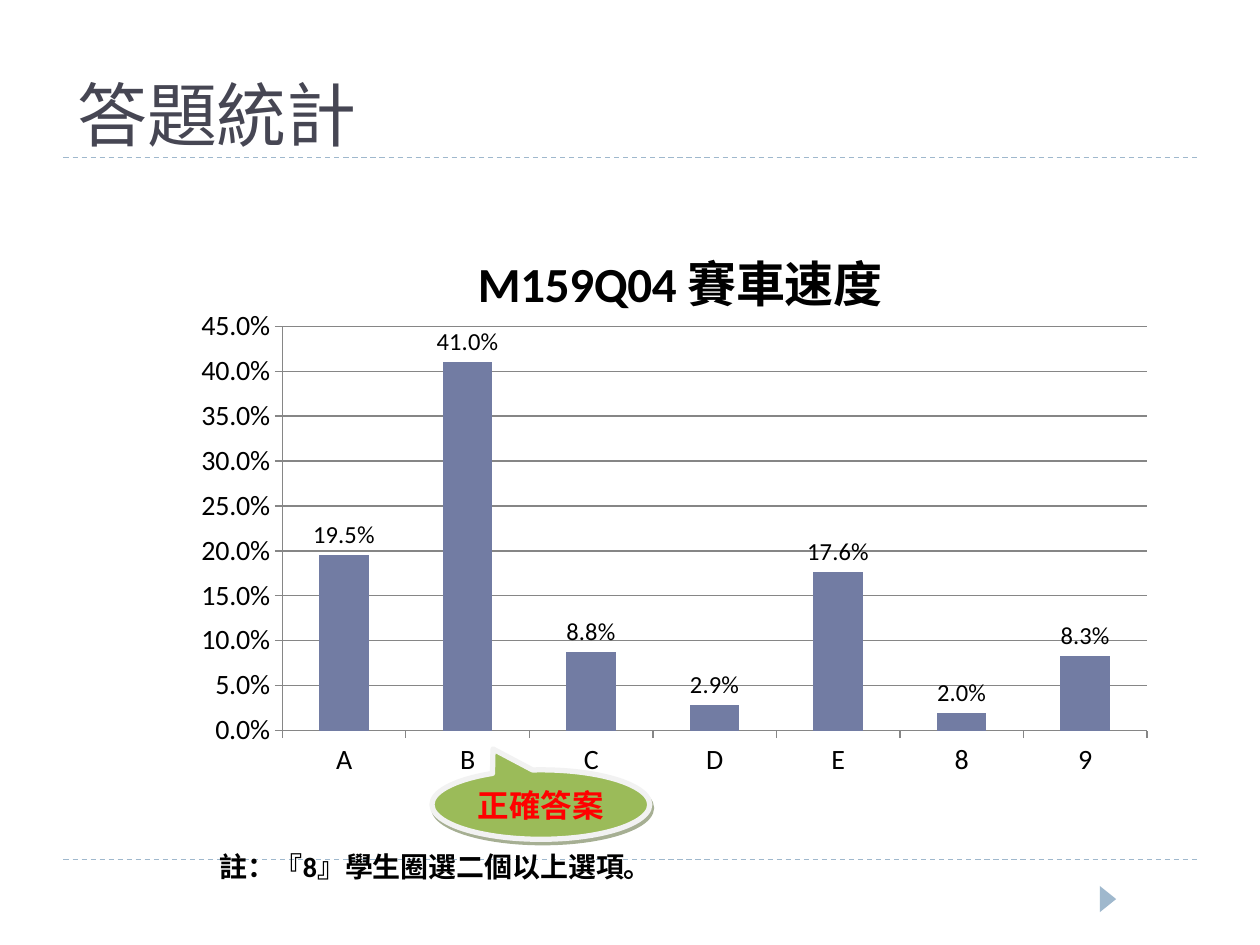
from dataclasses import dataclass

from lxml import etree
from pptx import Presentation
from pptx import util as u
from pptx.chart.data import CategoryChartData
from pptx.dml.color import RGBColor
from pptx.enum import chart as charts, dml, shapes, text
from pptx.oxml import parse_xml
from pptx.oxml.ns import nsdecls, qn


@dataclass(frozen=True)
class Theme:
    """Colours, fonts and type sizes of the deck."""
    rule: str = "9FB8CD"
    title: str = "464653"
    bar: str = "727CA3"
    grid: str = "868686"
    ink: str = "000000"
    callout: str = "9BBB59"
    border: str = "F2F2F2"
    shadow: str = "4E6128"
    answer: str = "FF0000"
    latin: str = "Calibri"
    serif: str = "Times New Roman"
    cjk: str = "Noto Sans CJK SC"
    title_size: int = 40
    chart_title_size: int = 28
    axis_size: int = 16
    label_size: int = 14
    note_size: int = 16
    answer_size: int = 18


@dataclass(frozen=True)
class Box:
    """A rectangle in centimetres."""
    left: float
    top: float
    width: float
    height: float

    def lengths(self):
        """Return the four sides as slide lengths."""
        return [u.Cm(side) for side in (self.left, self.top, self.width, self.height)]


THEME = Theme()


def rgb(code):
    """Turn a hex code into a colour."""
    return RGBColor.from_string(code)


def style(font, size, color, name, bold=False):
    """Set the look of a font."""
    font.size = u.Pt(size)
    font.color.rgb = rgb(color)
    font.name = name
    font.bold = bold


def add_effects(shape, content=""):
    """Replace inherited effects with the given ones."""
    shape._element.spPr.append(
        parse_xml(f"<a:effectLst {nsdecls('a')}>{content}</a:effectLst>"))


def add_rule(page, box, offset):
    """Draw a dashed rule across the box."""
    left, top, width, _ = box.lengths()
    level = top + u.Cm(offset)
    rule = page.shapes.add_connector(
        shapes.MSO_CONNECTOR.STRAIGHT, left, level, left + width, level)
    rule.line.color.rgb = rgb(THEME.rule)
    rule.line.width = u.Pt(0.75)
    rule.line.dash_style = dml.MSO_LINE.DASH
    add_effects(rule)


def add_frame(page, box):
    """Draw the rules on both edges of the box and the page marker below it."""
    for offset in (0, box.height):
        add_rule(page, box, offset)
    marker_box = Box(box.left + 20.79, box.top + box.height + 0.64, 0.53, 0.33)
    marker = page.shapes.add_shape(
        shapes.MSO_SHAPE.ISOSCELES_TRIANGLE, *marker_box.lengths())
    marker.rotation = 90
    marker.shadow.inherit = False
    marker.fill.solid()
    marker.fill.fore_color.rgb = rgb(THEME.rule)
    marker.line.fill.background()


def add_title(page, box, words):
    """Fill the title placeholder."""
    title = page.shapes.title
    title.left, title.top, title.width, title.height = box.lengths()
    frame = title.text_frame
    frame.text = words
    frame.vertical_anchor = text.MSO_ANCHOR.BOTTOM
    para = frame.paragraphs[0]
    para.alignment = text.PP_ALIGN.LEFT
    style(para.runs[0].font, THEME.title_size, THEME.title, THEME.serif)


def set_layout(element, **places):
    """Place a chart part by fractions of the chart."""
    layout = element.find(qn("c:layout"))
    if layout is None:
        layout = element.get_or_add_layout()
    for child in list(layout):
        layout.remove(child)
    manual = etree.SubElement(layout, qn("c:manualLayout"))
    if "w" in places:
        etree.SubElement(manual, qn("c:layoutTarget"), val="inner")
    for mode in ("xMode", "yMode"):
        etree.SubElement(manual, qn(f"c:{mode}"), val="edge")
    for key, value in places.items():
        etree.SubElement(manual, qn(f"c:{key}"), val=str(value))


def add_answer_chart(page, box, heading, shares):
    """Draw the share of students for each answer."""
    data = CategoryChartData(number_format="0.0%")
    data.categories = list(shares)
    data.add_series("Series 1", list(shares.values()))
    chart = page.shapes.add_chart(
        charts.XL_CHART_TYPE.COLUMN_CLUSTERED, *box.lengths(), data).chart
    style(chart.font, 10, THEME.ink, THEME.latin)
    chart.has_legend = False
    chart.has_title = True
    frame = chart.chart_title.text_frame
    frame.text = heading
    style(frame.paragraphs[0].runs[0].font, THEME.chart_title_size, THEME.ink, THEME.latin, True)
    set_layout(chart.chart_title._element, x=0.29, y=0.06)

    for axis in (chart.category_axis, chart.value_axis):
        style(axis.tick_labels.font, THEME.axis_size, THEME.ink, THEME.latin)
        axis.format.line.color.rgb = rgb(THEME.grid)
        axis.major_tick_mark = charts.XL_TICK_MARK.OUTSIDE
    scale = chart.value_axis
    scale.minimum_scale, scale.maximum_scale, scale.major_unit = 0, 0.45, 0.05
    scale.tick_labels.number_format = "0.0%"
    scale.tick_labels.number_format_is_linked = False
    scale.major_gridlines.format.line.color.rgb = rgb(THEME.grid)

    plot = chart.plots[0]
    plot.vary_by_categories = False
    plot.gap_width = 150
    fill = plot.series[0].format.fill
    fill.solid()
    fill.fore_color.rgb = rgb(THEME.bar)
    plot.has_data_labels = True
    labels = plot.data_labels
    labels.show_value = True
    labels.number_format = "0.0%"
    labels.number_format_is_linked = False
    labels.position = charts.XL_LABEL_POSITION.OUTSIDE_END
    style(labels.font, THEME.label_size, THEME.ink, THEME.latin)
    area = chart._chartSpace.chart.plotArea
    if area.find(qn("c:layout")) is None:
        area.insert(0, etree.Element(qn("c:layout")))
    set_layout(area, x=0.1, y=0.22, w=0.88, h=0.68)


def add_note(page, box, parts):
    """Write the bold note under the chart."""
    frame = page.shapes.add_textbox(*box.lengths()).text_frame
    frame.word_wrap = True
    frame.margin_left = u.Cm(0.33)
    frame.vertical_anchor = text.MSO_ANCHOR.MIDDLE
    for words, font_name in parts:
        span = frame.paragraphs[0].add_run()
        span.text = words
        style(span.font, THEME.note_size, THEME.ink, font_name, True)


def add_callout(page, box, words):
    """Point out the correct answer."""
    callout = page.shapes.add_shape(shapes.MSO_SHAPE.OVAL_CALLOUT, *box.lengths())
    callout.adjustments[0], callout.adjustments[1] = -0.22, -0.8
    callout.fill.solid()
    callout.fill.fore_color.rgb = rgb(THEME.callout)
    callout.line.color.rgb = rgb(THEME.border)
    callout.line.width = u.Pt(3)
    add_effects(callout, (
        f'<a:outerShdw dist="{u.Pt(2.2)}" dir="3780000" algn="ctr" rotWithShape="0">'
        f'<a:srgbClr val="{THEME.shadow}"><a:alpha val="50000"/></a:srgbClr></a:outerShdw>'))
    frame = callout.text_frame
    frame.text = words
    frame.word_wrap = True
    frame.margin_top = frame.margin_bottom = 0
    frame.vertical_anchor = text.MSO_ANCHOR.MIDDLE
    para = frame.paragraphs[0]
    para.alignment = text.PP_ALIGN.CENTER
    style(para.runs[0].font, THEME.answer_size, THEME.answer, THEME.cjk, True)


def main():
    """Build the deck."""
    deck = Presentation()
    deck.slide_width, deck.slide_height = u.Cm(25.4), u.Cm(19.05)
    page = deck.slides.add_slide(deck.slide_layouts[5])
    add_frame(page, Box(1.28, 3.18, 22.86, 14.14))
    add_title(page, Box(1.3, 0.53, 18.59, 2.74), "答題統計")
    shares = dict(zip("ABCDE89", (0.195, 0.41, 0.088, 0.029, 0.176, 0.02, 0.083)))
    add_answer_chart(page, Box(3.71, 3.94, 19.81, 11.99), "M159Q04 賽車速度", shares)
    add_note(page, Box(4.09, 16.99, 14.1, 0.94), [
        ("註：『", THEME.serif), ("8", THEME.latin), ("』學生圈選二個以上選項。", THEME.serif)])
    add_callout(page, Box(8.71, 15.52, 4.39, 1.4), "正確答案")
    deck.save("out.pptx")


if __name__ == "__main__":
    main()
